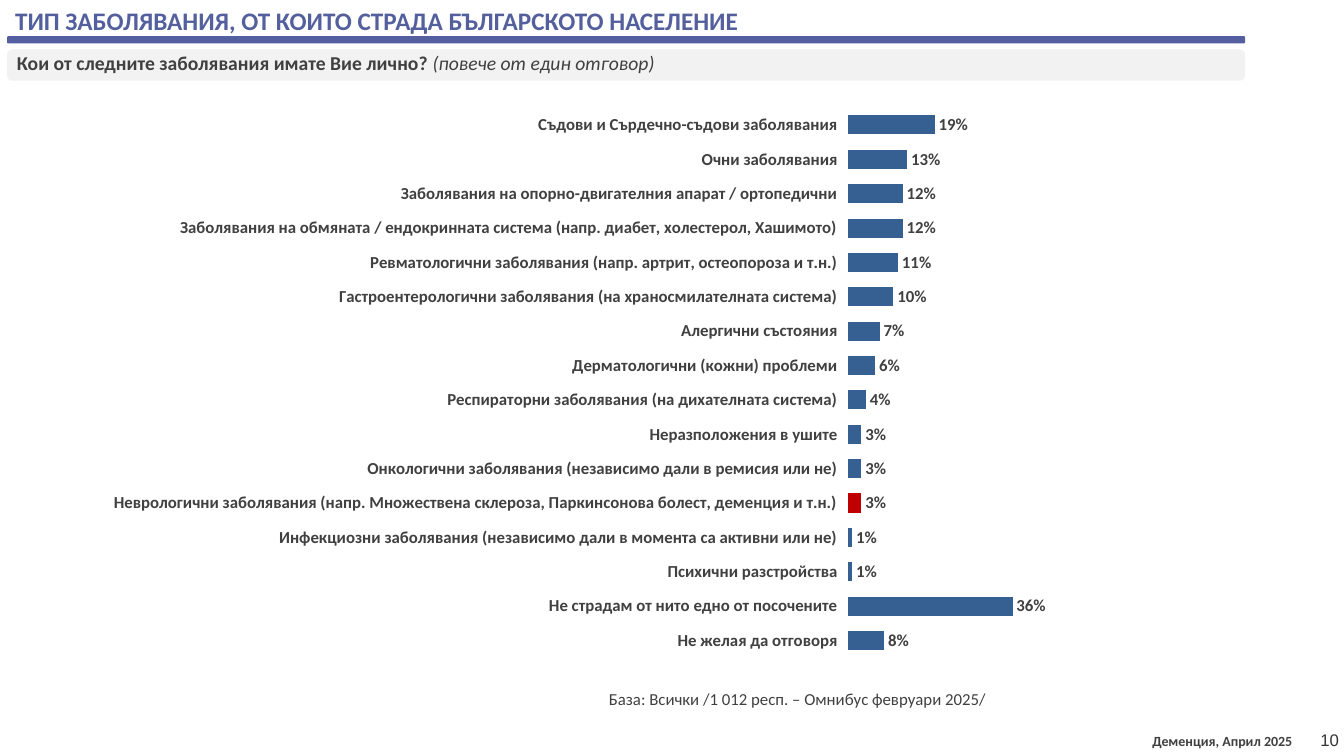
"""Build the survey slide on the illnesses reported by the Bulgarian population."""
from dataclasses import dataclass

from lxml import etree
from pptx import Presentation
from pptx.chart.data import CategoryChartData
from pptx.dml.color import RGBColor
from pptx.enum.chart import XL_CHART_TYPE, XL_LABEL_POSITION, XL_TICK_LABEL_POSITION, XL_TICK_MARK
from pptx.enum.shapes import MSO_SHAPE
from pptx.enum.text import PP_ALIGN
from pptx.oxml.ns import qn
from pptx.util import Inches, Pt

BARS = XL_CHART_TYPE.BAR_CLUSTERED
OUTSIDE = XL_LABEL_POSITION.OUTSIDE_END
LOW = XL_TICK_LABEL_POSITION.LOW
NO_TICK = XL_TICK_MARK.NONE
ROUND = MSO_SHAPE.ROUNDED_RECTANGLE
LEFT, RIGHT, JUSTIFY = PP_ALIGN.LEFT, PP_ALIGN.RIGHT, PP_ALIGN.JUSTIFY

COLORS = {
    "rule": "545FA0",
    "band": "F2F2F2",
    "title": "545F9D",
    "text": "404040",
    "page": "333332",
    "bar": "376092",
    "accent": "C00000",
}


@dataclass
class Run:
    text: str
    size: float
    color: str = "text"
    bold: bool = False
    italic: bool = False
    font: str = "Calibri"


@dataclass
class Label:
    box: tuple
    runs: list
    align: PP_ALIGN = LEFT
    inset: float = 0.1
    after: float = 0


@dataclass
class Strip:
    box: tuple
    color: str


STRIPS = [
    Strip((0.07, 0.36, 12.28, 0.07), "rule"),
    Strip((0.07, 0.49, 12.28, 0.31), "band"),
]
LABELS = [
    Label((11.33, 7.22, 1.71, 0.27), [Run("Деменция, Април 2025", 10, bold=True)]),
    Label((10.55, 7.19, 2.83, 0.28), [Run("10", 12, "page", font="Arial")], RIGHT),
    Label((0.07, 0.46, 11.8, 0.34), [
        Run("Кои от следните заболявания имате Вие лично? ", 14, bold=True),
        Run("(повече от един отговор)", 14, italic=True),
    ], JUSTIFY, after=6),
    Label((0, 0, 11.8, 0.4), [
        Run("ТИП ЗАБОЛЯВАНИЯ, ОТ КОИТО СТРАДА БЪЛГАРСКОТО НАСЕЛЕНИЕ", 18, "title", True),
    ], inset=0.15),
]
CHART_BOX = (-2.14, 0.72, 15.09, 6.37)
BASE = Run("База: Всички /1 012 респ. – Омнибус февруари 2025/", 12)
FOCUS = "Неврологични заболявания (напр. Множествена склероза, Паркинсонова болест, деменция и т.н.)"
SHARES = {
    "Съдови и Сърдечно-съдови заболявания": 0.19,
    "Очни заболявания": 0.13,
    "Заболявания на опорно-двигателния апарат / ортопедични": 0.12,
    "Заболявания на обмяната / ендокринната система (напр. диабет, холестерол, Хашимото)": 0.12,
    "Ревматологични заболявания (напр. артрит, остеопороза и т.н.)": 0.11,
    "Гастроентерологични заболявания (на храносмилателната система)": 0.10,
    "Алергични състояния": 0.07,
    "Дерматологични (кожни) проблеми": 0.06,
    "Респираторни заболявания (на дихателната система)": 0.04,
    "Неразположения в ушите": 0.03,
    "Онкологични заболявания (независимо дали в ремисия или не)": 0.03,
    FOCUS: 0.03,
    "Инфекциозни заболявания (независимо дали в момента са активни или не)": 0.01,
    "Психични разстройства": 0.01,
    "Не страдам от нито едно от посочените": 0.36,
    "Не желая да отговоря": 0.08,
}


def paint(fill, color: str) -> None:
    fill.solid()
    fill.fore_color.rgb = RGBColor.from_string(COLORS[color])


def style(font, run: Run) -> None:
    font.name, font.size = run.font, Pt(run.size)
    font.bold, font.italic = run.bold, run.italic
    font.color.rgb = RGBColor.from_string(COLORS[run.color])


def add_run(para, run: Run) -> None:
    piece = para.add_run()
    piece.text = run.text
    style(piece.font, run)


def add_strip(slide, strip: Strip) -> None:
    shape = slide.shapes.add_shape(ROUND, *map(Inches, strip.box))
    shape.shadow.inherit = False
    paint(shape.fill, strip.color)
    shape.line.fill.background()


def add_label(slide, label: Label) -> None:
    frame = slide.shapes.add_textbox(*map(Inches, label.box)).text_frame
    frame.word_wrap = True
    frame.margin_left = Inches(label.inset)
    para = frame.paragraphs[0]
    para.alignment = label.align
    para.space_after = Pt(label.after)
    for run in label.runs:
        add_run(para, run)


def set_layout(parent, index: int, **marks) -> None:
    for old in parent.findall(qn("c:layout")):
        parent.remove(old)
    layout = etree.Element(qn("c:layout"))
    manual = etree.SubElement(layout, qn("c:manualLayout"))
    for name, value in marks.items():
        etree.SubElement(manual, qn(f"c:{name}")).set("val", str(value))
    parent.insert(index, layout)


def add_bars(slide) -> None:
    data = CategoryChartData(number_format="0%")
    data.categories = list(SHARES)
    data.add_series("Series 1", list(SHARES.values()))
    chart = slide.shapes.add_chart(BARS, *map(Inches, CHART_BOX), data).chart
    chart.has_legend = False
    chart.font.name, chart.font.size = "Arial", Pt(10)

    title = chart.chart_title
    add_run(title.text_frame.paragraphs[0], BASE)
    title.include_in_layout = False
    set_layout(title._element, 1, xMode="edge", yMode="edge", x=0.54, y=0.955)
    area = chart._chartSpace.chart.plotArea
    set_layout(area, 0, layoutTarget="inner", xMode="edge", yMode="edge",
               x=0.699, y=0.055, w=0.301, h=0.858)

    bold = Run("", 12, bold=True)
    rows = chart.category_axis
    rows.reverse_order = True
    rows.major_tick_mark = rows.minor_tick_mark = NO_TICK
    rows.tick_label_position = LOW
    rows.format.line.fill.background()
    style(rows.tick_labels.font, bold)
    scale = chart.value_axis
    scale.minimum_scale, scale.maximum_scale = 0, 1
    scale.has_major_gridlines = False
    scale.visible = False

    plot = chart.plots[0]
    plot.gap_width = 80
    plot.vary_by_categories = False
    bars = plot.series[0]
    bars.invert_if_negative = False
    paint(bars.format.fill, "bar")
    paint(bars.points[list(SHARES).index(FOCUS)].format.fill, "accent")
    marks = bars.data_labels
    marks.show_value = True
    marks.number_format, marks.number_format_is_linked = "0%", False
    marks.position = OUTSIDE
    style(marks.font, bold)


def main() -> None:
    deck = Presentation()
    deck.slide_width, deck.slide_height = Inches(13.33), Inches(7.5)
    slide = deck.slides.add_slide(deck.slide_layouts[6])
    for strip in STRIPS:
        add_strip(slide, strip)
    for label in LABELS:
        add_label(slide, label)
    add_bars(slide)
    deck.save("out.pptx")


if __name__ == "__main__":
    main()
